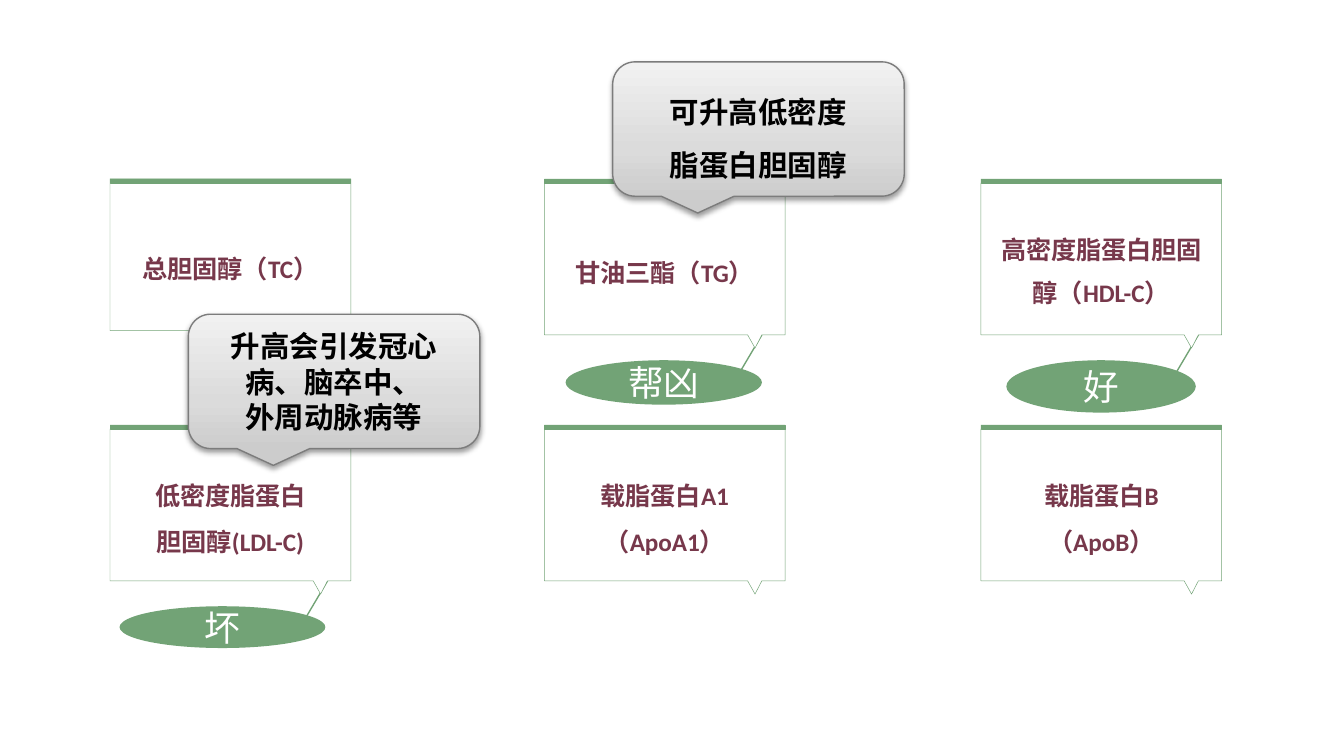
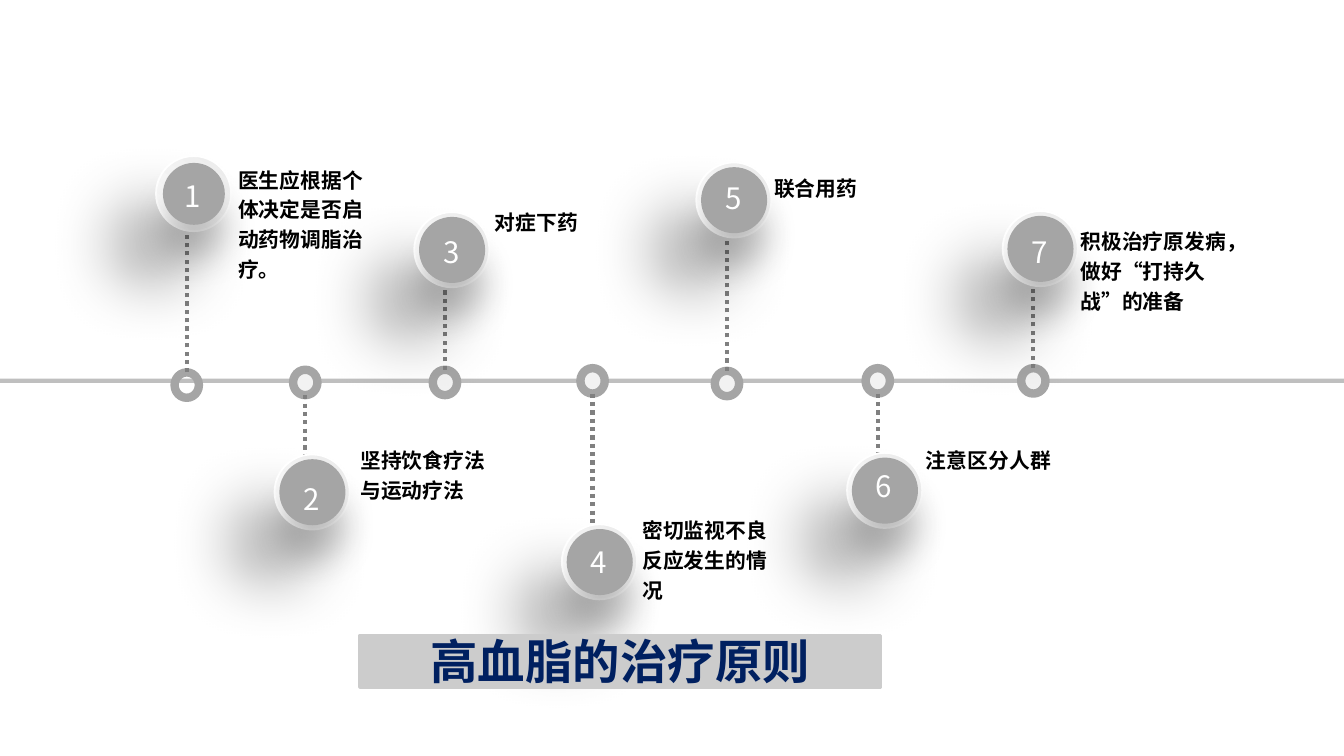
from dataclasses import dataclass

from pptx import Presentation
from pptx.dml.color import RGBColor
from pptx.enum.dml import MSO_LINE
from pptx.enum.shapes import MSO_CONNECTOR, MSO_SHAPE
from pptx.enum.text import MSO_ANCHOR, MSO_AUTO_SIZE, PP_ALIGN
from pptx.oxml import parse_xml
from pptx.oxml.ns import nsdecls
from pptx.util import Cm, Pt


@dataclass(frozen=True)
class Theme:
    green: str = "72A376"
    plum: str = "77384B"
    navy: str = "002060"
    white: str = "FFFFFF"
    black: str = "000000"
    disc: str = "A5A5A5"
    marker: str = "F2F2F2"
    stem: str = "808080"
    axis: str = "BFBFBF"
    pill: str = "CCCCCC"
    callout_line: str = "7C7C7C"
    title_outline: str = "5F5F5F"
    # Gradients: angle, then (position, colour) stops
    callout_gradient: tuple = (270, ((0, "CCCCCC"), (35, "DBDBDB"), (100, "F1F1F1")))
    ring_gradient: tuple = (126, ((0, "EBEBEB"), (100, "FEFEFE")))
    # Shadows: colour, opacity, blur, distance, direction
    callout_shadow: tuple = ("000000", 38, 3.1, 1.6, 90)
    ring_shadow: tuple = ("000000", 38, 36, 35, 130)
    disc_shadow: tuple = ("262626", 28, 18, 18, 90)
    latin: str = "Calibri"
    chinese: str = "Noto Sans CJK SC"
    label_size: float = 11.1
    box_size: float = 13.5
    callout_size: float = 15.8
    number_size: float = 15.8
    verdict_size: float = 19.1
    title_size: float = 25.4


theme = Theme()


def paint(shape, fill=None, line=None, width=0.25, shadow=None):
    """Fill is a colour, a gradient tuple or None."""
    shape.shadow.inherit = False
    shape.fill.background()
    if isinstance(fill, tuple):
        angle, stops = fill
        stop_xml = "".join(
            f'<a:gs pos="{position * 1000}"><a:srgbClr val="{colour}"/></a:gs>'
            for position, colour in stops)
        properties = shape.element.spPr
        properties.replace(
            properties.find("{*}noFill"),
            parse_xml(f'<a:gradFill {nsdecls("a")} rotWithShape="1"><a:gsLst>{stop_xml}'
                      f'</a:gsLst><a:lin ang="{angle * 60000}" scaled="0"/></a:gradFill>'))
    elif fill:
        shape.fill.solid()
        shape.fill.fore_color.rgb = RGBColor.from_string(fill)
    if line:
        shape.line.color.rgb = RGBColor.from_string(line)
        shape.line.width = Pt(width)
    else:
        shape.line.fill.background()
    if shadow:
        colour, opacity, blur, distance, direction = shadow
        shape.element.spPr.find("{*}effectLst").append(parse_xml(
            f'<a:outerShdw {nsdecls("a")} blurRad="{Pt(blur)}" dist="{Pt(distance)}" '
            f'dir="{direction * 60000}" algn="ctr" rotWithShape="0"><a:srgbClr val="{colour}">'
            f'<a:alpha val="{opacity * 1000}"/></a:srgbClr></a:outerShdw>'))


def write(shape, text, size, colour, bold=False, font=theme.chinese, spacing=1.0,
          align=PP_ALIGN.CENTER, anchor=MSO_ANCHOR.MIDDLE, margins=(0.25, 0.13, 0.25, 0.13),
          auto_size=MSO_AUTO_SIZE.NONE):
    """Put text in a shape, one paragraph for each line."""
    frame = shape.text_frame
    frame.text = text
    left, top, right, bottom = map(Cm, margins)
    frame_format = {"word_wrap": True, "vertical_anchor": anchor, "auto_size": auto_size,
                    "margin_left": left, "margin_top": top,
                    "margin_right": right, "margin_bottom": bottom}
    for name, value in frame_format.items():
        setattr(frame, name, value)
    for paragraph in frame.paragraphs:
        paragraph.alignment = align
        paragraph.line_spacing = spacing
        for run in paragraph.runs:
            for name, value in {"size": Pt(size), "bold": bold, "name": font}.items():
                setattr(run.font, name, value)
            run.font.color.rgb = RGBColor.from_string(colour)
            run.font._element.find("{*}latin").addnext(
                parse_xml(f'<a:ea {nsdecls("a")} typeface="{theme.chinese}"/>'))


presentation = Presentation()
presentation.slide_width, presentation.slide_height = Cm(25.4), Cm(14.29)

# Slide 1: the six blood lipid measures
slide = presentation.slides.add_slide(presentation.slide_layouts[6])
columns = (2.08, 10.29, 18.54)
rows = (3.38, 8.03)
box_width, box_height, bar_height = 4.55, 2.87, 0.08
tail = ((4.11, box_height), (3.98, 3.12), (3.84, box_height))

# Column, row, text, line spacing, gap above the box, verdict (text, left, top, width, height)
boxes = (
    (0, 0, "总胆固醇（TC）", 1.5, 0, None),
    (1, 0, "甘油三酯（TG）", 1.5, bar_height, ("帮凶", 10.69, 6.81, 3.71, 0.84)),
    (2, 0, "高密度脂蛋白胆固醇（HDL-C）", 1.4, bar_height, ("好", 19.02, 6.81, 3.58, 0.99)),
    (0, 1, "低密度脂蛋白\n胆固醇(LDL-C)", 1.5, bar_height, ("坏", 2.26, 11.46, 3.89, 0.79)),
    (1, 1, "载脂蛋白A1（ApoA1）", 1.5, bar_height, None),
    (2, 1, "载脂蛋白B\n（ApoB）", 1.5, bar_height, None),
)
for column, row, text, spacing, gap, verdict in boxes:
    left, top = columns[column], rows[row] + gap
    if verdict:
        link = slide.shapes.add_connector(
            MSO_CONNECTOR.STRAIGHT, Cm(left + 4.11), Cm(top + box_height),
            Cm(left + 3.66), Cm(top + box_height + 0.76))
        link.line.color.rgb = RGBColor.from_string(theme.green)
        link.line.width = Pt(0.75)
        link.element.spPr.append(parse_xml(f'<a:effectLst {nsdecls("a")}/>'))

    # Box with a small tail, and the bar along its top
    outline = ((box_width, 0), (box_width, box_height)) + tail + ((0, box_height),)
    builder = slide.shapes.build_freeform(Cm(left), Cm(top))
    builder.add_line_segments([(Cm(left + x), Cm(top + y)) for x, y in outline], close=True)
    box = builder.convert_to_shape()
    paint(box, theme.white, theme.green)
    write(box, text, theme.box_size, theme.plum, True, theme.latin, spacing,
          margins=(0.25, 0.13, 0.25, 0.15))
    bar = slide.shapes.add_shape(MSO_SHAPE.RECTANGLE, Cm(left), Cm(rows[row]),
                                 Cm(box_width), Cm(bar_height))
    paint(bar, theme.green, theme.green)

    if verdict:
        ellipse = slide.shapes.add_shape(MSO_SHAPE.OVAL, *map(Cm, verdict[1:]))
        paint(ellipse, theme.green)
        write(ellipse, verdict[0], theme.verdict_size, theme.white, font=theme.latin)

# Callouts over the boxes
callouts = (
    (11.58, 1.17, "可升高低密度\n脂蛋白胆固醇", 1.5),
    (3.56, 5.94, "升高会引发冠心\n病、脑卒中、\n外周动脉病等", 1.0),
)
for left, top, text, spacing in callouts:
    callout = slide.shapes.add_shape(MSO_SHAPE.ROUNDED_RECTANGULAR_CALLOUT,
                                     Cm(left), Cm(top), Cm(5.51), Cm(2.54))
    paint(callout, theme.callout_gradient, theme.callout_line, 0.75, theme.callout_shadow)
    write(callout, text, theme.callout_size, theme.black, True, theme.latin, spacing)

# Slide 2: timeline of the treatment principles
slide = presentation.slides.add_slide(presentation.slide_layouts[5])
axis = slide.shapes.add_shape(MSO_SHAPE.RECTANGLE, 0, Cm(7.16), Cm(25.4), Cm(0.08))
paint(axis, theme.axis)

marker_width, marker_height = 0.46, 0.48
ring_size, disc_size = 1.42, 1.17

# Text, label (left, top, width, height), stem x, tops of marker, ring and number
steps = (
    ("医生应根据个体决定是否启动药物调脂治疗。", (4.5, 3.07, 2.64, 2.92), 3.53, 7.04, 2.95, 3.23),
    ("坚持饮食疗法与运动疗法", (6.81, 8.38, 2.44, 1.35), 5.77, 6.99, 8.59, 8.97),
    ("对症下药", (9.35, 3.84, 2.44, 2.92), 8.41, 6.99, 4.01, 4.29),
    ("密切监视不良反应发生的情况", (12.14, 9.7, 2.44, 2.51), 11.2, 6.96, 9.91, 10.16),
    ("联合用药", (14.63, 3.23, 2.44, 2.97), 13.74, 7.01, 3.07, 3.28),
    ("注意区分人群", (17.5, 8.38, 2.44, 2.95), 16.59, 6.96, 8.56, 8.71),
    ("积极治疗原发病，做好“打持久战”的准备", (20.42, 4.24, 3.15, 1.98), 19.53, 6.96, 3.99, 4.29),
)
for number, (text, place, x, marker_top, ring_top, number_top) in enumerate(steps, 1):
    first = number == 1
    label = slide.shapes.add_textbox(*map(Cm, place))
    write(label, text, theme.label_size, theme.black, True,
          spacing=1.25 if number == 3 else 1.2,
          align=PP_ALIGN.LEFT, anchor=MSO_ANCHOR.TOP, margins=(0, 0, 0, 0))

    # Marker on the axis and the dotted stem to the ring
    marker = slide.shapes.add_shape(MSO_SHAPE.OVAL, Cm(x - marker_width / 2), Cm(marker_top),
                                    Cm(marker_width), Cm(marker_height))
    paint(marker, None if first else theme.marker, theme.disc, 4.5)
    stem_start = marker_top if ring_top < marker_top else marker_top + marker_height
    stem = slide.shapes.add_connector(MSO_CONNECTOR.STRAIGHT, Cm(x), Cm(stem_start),
                                      Cm(x), Cm(ring_top + ring_size / 2))
    stem.line.color.rgb = RGBColor.from_string(theme.stem)
    stem.line.width = Pt(2.25)
    stem.line.dash_style = MSO_LINE.ROUND_DOT
    stem.element.spPr.find("{*}ln").append(
        parse_xml(f'<a:tailEnd {nsdecls("a")} type="oval"/>'))
    stem.element.spPr.append(parse_xml(f'<a:effectLst {nsdecls("a")}/>'))

    # Ring, disc and number
    ring_left = x - 0.58
    ring = slide.shapes.add_shape(MSO_SHAPE.OVAL, Cm(ring_left), Cm(ring_top),
                                  Cm(ring_size), Cm(ring_size))
    paint(ring, theme.ring_gradient, theme.white, 1, theme.ring_shadow)
    disc = slide.shapes.add_shape(MSO_SHAPE.OVAL, Cm(ring_left + 0.13), Cm(ring_top + 0.13),
                                  Cm(disc_size), Cm(disc_size))
    paint(disc, theme.disc, None if first else theme.disc, 2.25, theme.disc_shadow)
    digit = slide.shapes.add_textbox(Cm(ring_left + 0.08), Cm(number_top), Cm(1.24), Cm(0.94))
    write(digit, str(number), theme.number_size, theme.white, anchor=MSO_ANCHOR.TOP,
          auto_size=MSO_AUTO_SIZE.SHAPE_TO_FIT_TEXT)

# Title in a pill, in front of the timeline
title = slide.shapes.title
title_place = {"left": Cm(6.81), "top": Cm(12.01), "width": Cm(9.83), "height": Cm(0.97)}
for name, value in title_place.items():
    setattr(title, name, value)
title.element.spPr.insert(1, parse_xml(
    f'<a:prstGeom {nsdecls("a")} prst="roundRect"><a:avLst>'
    '<a:gd name="adj" fmla="val 50000"/></a:avLst></a:prstGeom>'))
paint(title, theme.pill, theme.pill, 2)
write(title, "高血脂的治疗原则", theme.title_size, theme.navy, True)
title.text_frame.paragraphs[0].runs[0].font._element.insert(0, parse_xml(
    f'<a:ln {nsdecls("a")} w="{Pt(0.75)}"><a:solidFill>'
    f'<a:srgbClr val="{theme.title_outline}"/></a:solidFill></a:ln>'))
title.element.getparent().append(title.element)

presentation.save("out.pptx")
